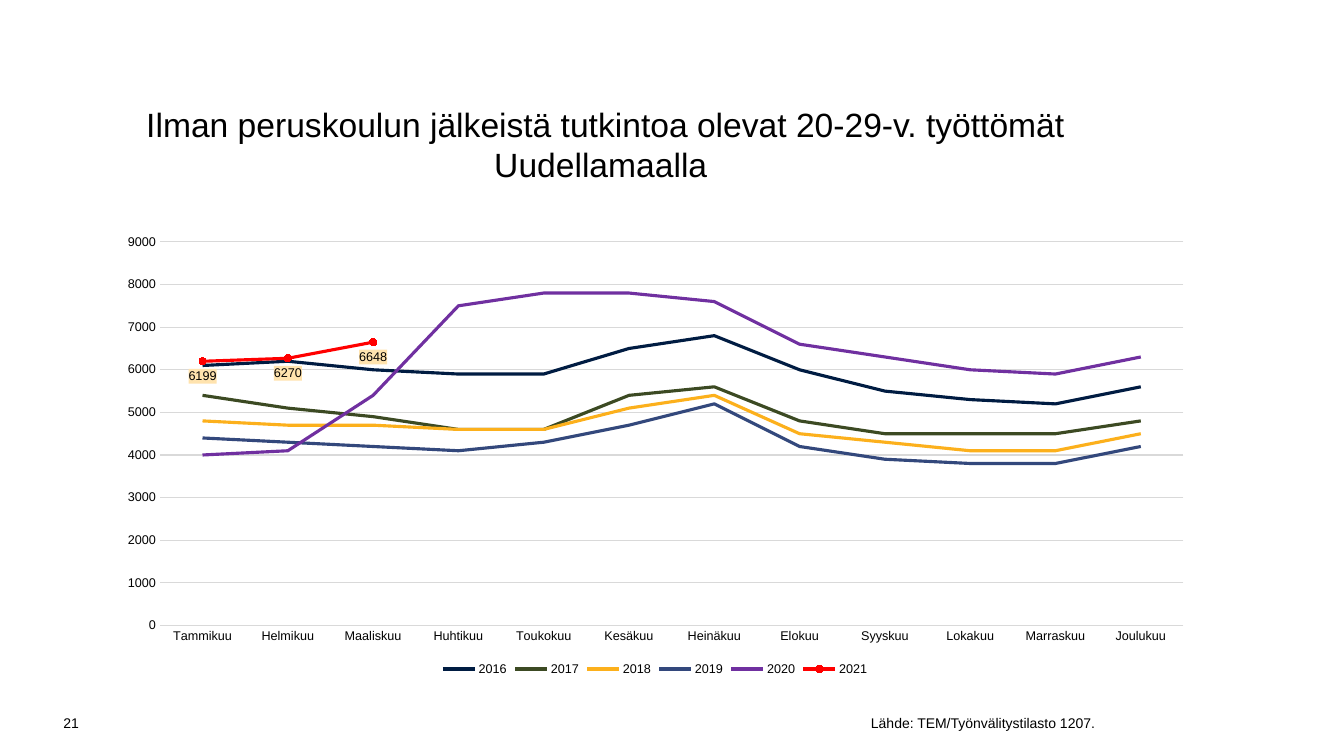
from lxml.etree import fromstring
from pptx import Presentation
from pptx.chart.data import CategoryChartData
from pptx.dml.color import RGBColor
from pptx.enum.chart import (XL_CHART_TYPE, XL_LABEL_POSITION, XL_LEGEND_POSITION,
                             XL_MARKER_STYLE, XL_TICK_MARK)
from pptx.enum.text import MSO_ANCHOR, MSO_AUTO_SIZE, PP_ALIGN
from pptx.util import Pt

TITLE = "Ilman peruskoulun jälkeistä tutkintoa olevat 20-29-v. työttömät Uudellamaalla "
FOOTERS = [
    ("Lähde: TEM/Työnvälitystilasto 1207.", (85.7, 501.8, 703.4, 28.8)),
    ("21", (21.6, 502.6, 41.8, 28.1)),
]
MONTHS = ["Tammikuu", "Helmikuu", "Maaliskuu", "Huhtikuu", "Toukokuu", "Kesäkuu",
          "Heinäkuu", "Elokuu", "Syyskuu", "Lokakuu", "Marraskuu", "Joulukuu"]
UNEMPLOYED = {
    "2016": [6100, 6200, 6000, 5900, 5900, 6500, 6800, 6000, 5500, 5300, 5200, 5600],
    "2017": [5400, 5100, 4900, 4600, 4600, 5400, 5600, 4800, 4500, 4500, 4500, 4800],
    "2018": [4800, 4700, 4700, 4600, 4600, 5100, 5400, 4500, 4300, 4100, 4100, 4500],
    "2019": [4400, 4300, 4200, 4100, 4300, 4700, 5200, 4200, 3900, 3800, 3800, 4200],
    "2020": [4000, 4100, 5400, 7500, 7800, 7800, 7600, 6600, 6300, 6000, 5900, 6300],
    "2021": [6199, 6270, 6648] + [None] * 9,
}
LATEST_YEAR = "2021"
COLORS = {
    "text": "000000", "grid": "D9D9D9", "label": "FFE3AE",
    "2016": "001C42", "2017": "3C4A23", "2018": "FCB01C",
    "2019": "33487C", "2020": "7030A0", "2021": "FF0000",
}
FONT = "Arial"
TITLE_BOX = (74.9, 70.6, 715, 63.4)
CHART_BOX = (74.9, 159.8, 786.2, 326.2)
PLOT_AREA = {"x": 0.05, "y": 0.04, "w": 0.93, "h": 0.84}
CHART_NS = "http://schemas.openxmlformats.org/drawingml/2006/chart"
DRAWING_NS = "http://schemas.openxmlformats.org/drawingml/2006/main"


def color(name):
    return RGBColor.from_string(COLORS[name])


def style_font(font, size):
    font.name = FONT
    font.size = Pt(size)
    font.bold = False
    font.color.rgb = color("text")


def style_line(line, name, width):
    line.color.rgb = color(name)
    line.width = Pt(width)


def fill_text(shape, text, size, alignment, anchor):
    frame = shape.text_frame
    frame.text = text
    frame.word_wrap = True
    frame.auto_size = MSO_AUTO_SIZE.NONE
    frame.vertical_anchor = anchor
    paragraph = frame.paragraphs[0]
    paragraph.alignment = alignment
    style_font(paragraph.runs[0].font, size)


def add_title(slide):
    title = slide.shapes.title
    title.left, title.top, title.width, title.height = map(Pt, TITLE_BOX)
    fill_text(title, TITLE, 24, PP_ALIGN.CENTER, MSO_ANCHOR.TOP)


def add_footers(slide):
    for text, box in FOOTERS:
        shape = slide.shapes.add_textbox(*map(Pt, box))
        fill_text(shape, text, 10, PP_ALIGN.RIGHT, MSO_ANCHOR.MIDDLE)


def set_plot_area(chart):
    sizes = "".join(f'<c:{key} val="{value}"/>' for key, value in PLOT_AREA.items())
    layout = fromstring(
        f'<c:layout xmlns:c="{CHART_NS}"><c:manualLayout><c:layoutTarget val="inner"/>'
        f'<c:xMode val="edge"/><c:yMode val="edge"/>{sizes}</c:manualLayout></c:layout>')
    plot_area = chart.element.find(f".//{{{CHART_NS}}}plotArea")
    for old_layout in plot_area.findall(f"{{{CHART_NS}}}layout"):
        plot_area.remove(old_layout)
    plot_area.insert(0, layout)


def label_values(chart, series):
    labels = series.data_labels
    labels.show_value = True
    labels.position = XL_LABEL_POSITION.BELOW
    style_font(labels.font, 9)
    background = fromstring(
        f'<c:spPr xmlns:c="{CHART_NS}" xmlns:a="{DRAWING_NS}"><a:solidFill>'
        f'<a:srgbClr val="{COLORS["label"]}"/></a:solidFill></c:spPr>')
    label_text = chart.element.find(f".//{{{CHART_NS}}}dLbls/{{{CHART_NS}}}txPr")
    label_text.addprevious(background)


def style_series(chart, series):
    series.smooth = False
    style_line(series.format.line, series.name, 2.25)
    marker = series.marker
    if series.name != LATEST_YEAR:
        marker.style = XL_MARKER_STYLE.NONE
        return
    marker.style = XL_MARKER_STYLE.CIRCLE
    marker.size = 5
    marker.format.fill.solid()
    marker.format.fill.fore_color.rgb = color(series.name)
    style_line(marker.format.line, series.name, 0.75)
    label_values(chart, series)


def style_axes(chart):
    for axis in (chart.category_axis, chart.value_axis):
        axis.major_tick_mark = XL_TICK_MARK.NONE
        axis.minor_tick_mark = XL_TICK_MARK.NONE
        style_font(axis.tick_labels.font, 9)
    style_line(chart.category_axis.format.line, "grid", 0.75)
    value_axis = chart.value_axis
    value_axis.minimum_scale = 0
    value_axis.maximum_scale = 9000
    value_axis.major_unit = 1000
    value_axis.format.line.fill.background()
    style_line(value_axis.major_gridlines.format.line, "grid", 0.75)


def add_unemployment_chart(slide):
    data = CategoryChartData(number_format="0")
    data.categories = MONTHS
    for year, values in UNEMPLOYED.items():
        data.add_series(year, values)
    frame = slide.shapes.add_chart(XL_CHART_TYPE.LINE_MARKERS, *map(Pt, CHART_BOX), data)
    chart = frame.chart
    chart.has_title = False
    style_font(chart.font, 10)
    chart.has_legend = True
    chart.legend.position = XL_LEGEND_POSITION.BOTTOM
    chart.legend.include_in_layout = False
    style_font(chart.legend.font, 9)
    plot = chart.plots[0]
    plot.vary_by_categories = False
    for series in plot.series:
        style_series(chart, series)
    style_axes(chart)
    set_plot_area(chart)


def main():
    presentation = Presentation()
    presentation.slide_width = Pt(960)
    presentation.slide_height = Pt(540)
    slide = presentation.slides.add_slide(presentation.slide_layouts[5])
    add_title(slide)
    add_footers(slide)
    add_unemployment_chart(slide)
    presentation.save("out.pptx")


if __name__ == "__main__":
    main()
